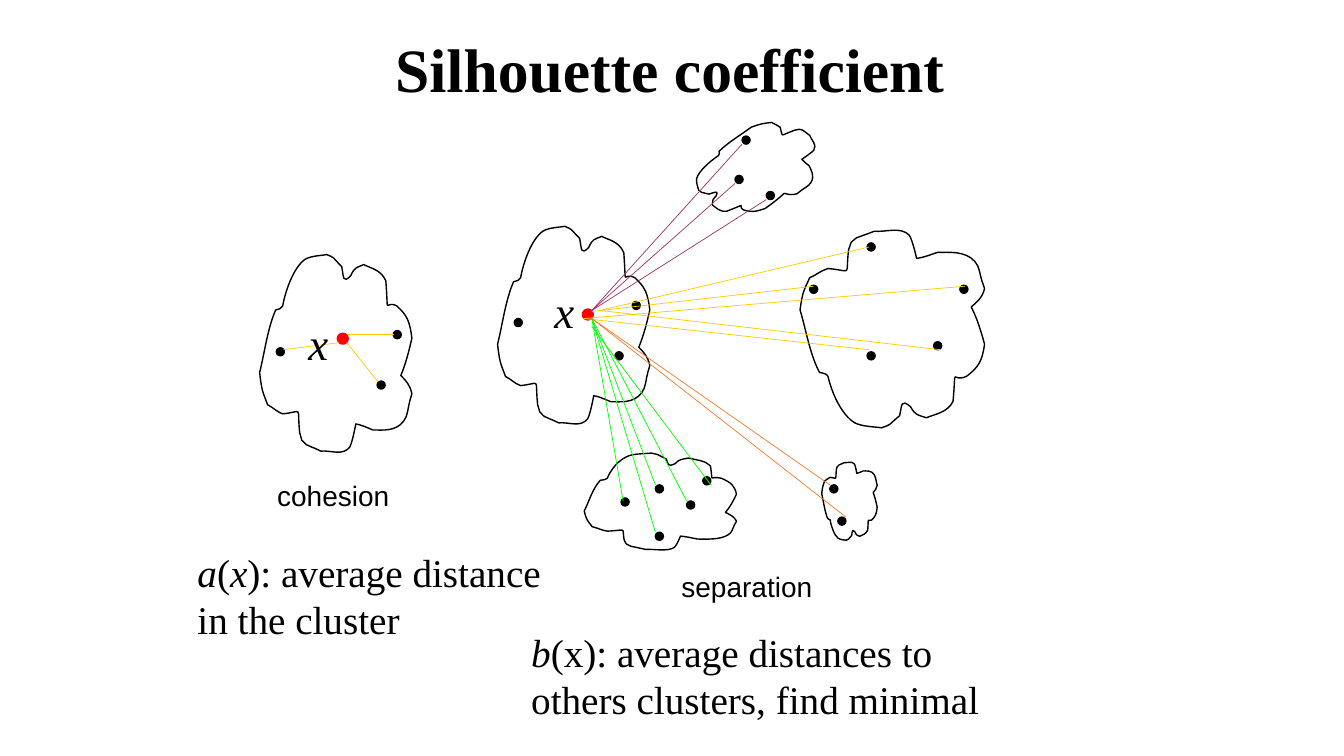
from dataclasses import dataclass

from lxml.etree import SubElement
from pptx import Presentation
from pptx.dml.color import RGBColor
from pptx.enum.shapes import MSO_CONNECTOR, MSO_SHAPE
from pptx.enum.text import MSO_ANCHOR, MSO_AUTO_SIZE, PP_ALIGN
from pptx.oxml.ns import qn
from pptx.shapes.autoshape import Shape
from pptx.shapes.shapetree import GroupShapes
from pptx.slide import Slide
from pptx.util import Inches, Pt

BLACK = RGBColor(0x00, 0x00, 0x00)
RED = RGBColor(0xFF, 0x00, 0x00)
YELLOW = RGBColor(0xFF, 0xCC, 0x00)
GREEN = RGBColor(0x00, 0xFF, 0x00)
ORANGE = RGBColor(0xED, 0x7D, 0x31)
PURPLE = RGBColor(0x99, 0x33, 0x66)
SERIF, SANS = "Times New Roman", "Arial"
DOT_SIZE = 0.08

Point = tuple[float, float]

# Upright cloud outline on a 152 by 200 grid: a start point, then three points per curve.
OUTLINE_WIDTH, OUTLINE_HEIGHT = 152, 200
OUTLINE = [
    (16, 55),
    (8, 73), (5, 97), (0, 117), (2, 135), (3, 136), (8, 149),
    (14, 152), (17, 156), (23, 158), (44, 156), (37, 149), (40, 177),
    (41, 179), (41, 181), (42, 184), (49, 191), (44, 187), (52, 191),
    (55, 192), (61, 195), (61, 195), (71, 194), (83, 200), (90, 191),
    (93, 185), (96, 168), (96, 168), (102, 169), (108, 172), (113, 174),
    (122, 174), (136, 176), (144, 165), (148, 160), (148, 152), (150, 145),
    (151, 142), (152, 138), (152, 138), (150, 129), (146, 125), (141, 120),
    (146, 108), (149, 96), (152, 83), (150, 66), (147, 60), (137, 51),
    (124, 44), (129, 65), (126, 26), (121, 15), (112, 14), (104, 10),
    (97, 13), (95, 12), (91, 21), (83, 29), (84, 23), (82, 12),
    (71, 1), (76, 4), (67, 0), (63, 1), (51, 1), (45, 5),
    (34, 13), (26, 35), (23, 51), (22, 54), (19, 54), (16, 55),
]


@dataclass
class Cluster:
    """A cloud lying on its side before its turn, and the top left corners of its dots."""
    left: float
    top: float
    width: float
    height: float
    dots: list[Point]
    angle: float = 270
    flipped: bool = False


@dataclass
class Distance:
    start: Point
    end: Point
    color: RGBColor


@dataclass
class Span:
    text: str
    italic: bool = False


@dataclass
class Label:
    left: float
    top: float
    width: float
    height: float
    spans: list[Span]
    size: int
    font: str = SERIF
    wrap: bool = True


@dataclass
class Diagram:
    clusters: list[Cluster]
    x_dot: Point
    distances: list[Distance]
    labels: list[Label]


def rays(start: Point, color: RGBColor, *ends: Point) -> list[Distance]:
    """Distances that share a start and a color."""
    return [Distance(start, end, color) for end in ends]


COHESION = Diagram(
    [Cluster(2.33, 2.77, 2, 1.51, [(3.74, 3.78), (2.74, 3.45), (3.9, 3.28)])],
    (3.36, 3.32),
    [Distance((2.81, 3.47), (3.36, 3.4), YELLOW),
     Distance((3.44, 3.4), (3.75, 3.79), YELLOW),
     Distance((3.44, 3.32), (3.91, 3.32), YELLOW)],
    [Label(2.65, 4.7, 1.31, 0.43, [Span("cohesion")], 20, SANS, wrap=False),
     Label(2.96, 3.08, 0.63, 0.64, [Span("x", True)], 32)],
)
SEPARATION = Diagram(
    [Cluster(4.69, 2.49, 2, 1.51, [(6.1, 3.49), (5.1, 3.16), (6.27, 2.99)]),
     Cluster(7.85, 2.33, 2, 1.83, [(9.52, 2.83), (8.03, 2.83), (8.6, 3.49),
                                   (8.6, 2.41), (9.26, 3.39)], 90, flipped=True),
     Cluster(6.06, 4.23, 0.98, 1.51, [(6.5, 5.28), (6.16, 4.94), (6.97, 4.73),
                                      (6.81, 4.97), (6.5, 4.81)]),
     Cluster(8.03, 4.69, 0.79, 0.55, [(8.31, 5.13), (8.23, 4.81)], 90, flipped=True),
     Cluster(6.89, 1.27, 1.26, 0.79, [(7.36, 1.35), (7.29, 1.74), (7.6, 1.9)],
             155.2, flipped=True)],
    (5.79, 3.08),
    rays((5.87, 3.09), YELLOW, (8.07, 2.84))
    + rays((5.79, 3.16), YELLOW, (8.62, 3.47), (9.57, 2.84))
    + rays((5.95, 3.08), YELLOW, (9.33, 3.47), (8.62, 2.45))
    + rays((5.87, 3.24), GREEN, (7.05, 4.81))
    + rays((5.87, 3.16), GREEN, (6.81, 4.97), (6.5, 4.81), (6.5, 5.28), (6.18, 4.97))
    + rays((5.87, 3.16), ORANGE, (8.23, 4.81), (8.39, 5.13))
    + rays((5.87, 3.08), PURPLE, (7.29, 1.82), (7.6, 1.98), (7.36, 1.43)),
    [Label(6.66, 5.6, 1.5, 0.43, [Span("separation")], 20, SANS, wrap=False),
     Label(5.4, 2.77, 0.47, 0.64, [Span("x", True)], 32)],
)
DEFINITIONS = [
    Label(1.86, 5.39, 3.62, 1.03,
          [Span("a", True), Span("("), Span("x", True),
           Span("): average distance in the cluster")], 28),
    Label(5.17, 6.18, 4.65, 1.03,
          [Span("b", True),
           Span("(x): average distances to others clusters, find minimal")], 28),
]


def bend_segments(cloud: Shape) -> None:
    """Turn each three straight segments of the outline into one Bezier curve."""
    segments = list(cloud._element.iter(qn("a:lnTo")))
    for first, second, third in zip(segments[::3], segments[1::3], segments[2::3]):
        first.tag = qn("a:cubicBezTo")
        for segment in (second, third):
            first.append(segment[0])
            segment.getparent().remove(segment)


def draw_cloud(shapes: GroupShapes, cluster: Cluster) -> None:
    points = []
    for x, y in OUTLINE:
        across = x / OUTLINE_WIDTH
        points.append((
            Inches(cluster.left + (1 - y / OUTLINE_HEIGHT) * cluster.width),
            Inches(cluster.top + (1 - across if cluster.flipped else across) * cluster.height)))
    builder = shapes.build_freeform(*points[0])
    builder.add_line_segments(points[1:], close=True)
    cloud = builder.convert_to_shape()
    bend_segments(cloud)
    cloud.rotation = cluster.angle
    cloud.shadow.inherit = False
    cloud.fill.background()
    cloud.line.color.rgb = BLACK
    cloud.line.width = Pt(1)


def draw_dot(shapes: GroupShapes, corner: Point, color: RGBColor, line_width: float) -> None:
    dot = shapes.add_shape(MSO_SHAPE.OVAL, *map(Inches, (*corner, DOT_SIZE, DOT_SIZE)))
    dot.shadow.inherit = False
    dot.fill.solid()
    dot.fill.fore_color.rgb = color
    dot.line.color.rgb = color
    dot.line.width = Pt(line_width)


def draw_distance(shapes: GroupShapes, distance: Distance) -> None:
    line = shapes.add_connector(MSO_CONNECTOR.STRAIGHT,
                                *map(Inches, (*distance.start, *distance.end)))
    line.line.color.rgb = distance.color
    line.line.width = Pt(0.5)
    SubElement(line._element.spPr, qn("a:effectLst"))


def draw_label(shapes: GroupShapes, label: Label) -> Shape:
    box = shapes.add_textbox(*map(Inches, (label.left, label.top, label.width, label.height)))
    frame = box.text_frame
    frame.word_wrap = label.wrap
    frame.auto_size = MSO_AUTO_SIZE.SHAPE_TO_FIT_TEXT
    if not label.wrap:
        frame.margin_right = 0
    for span in label.spans:
        run = frame.paragraphs[0].add_run()
        run.text = span.text
        run.font.name = label.font
        run.font.size = Pt(label.size)
        run.font.italic = span.italic
        run.font.color.rgb = BLACK
    return box


def draw_diagram(page: Slide, diagram: Diagram) -> None:
    shapes = page.shapes.add_group_shape().shapes
    for cluster in diagram.clusters:
        draw_cloud(shapes, cluster)
        for corner in cluster.dots:
            draw_dot(shapes, corner, BLACK, 1)
    draw_dot(shapes, diagram.x_dot, RED, 3)
    for distance in diagram.distances:
        draw_distance(shapes, distance)
    for label in diagram.labels:
        draw_label(shapes, label)


def draw_title(page: Slide) -> None:
    title = Label(1.9, 0.27, 9.49, 0.8, [Span("Silhouette coefficient")], 44)
    frame = draw_label(page.shapes, title).text_frame
    frame.auto_size = MSO_AUTO_SIZE.NONE
    frame.vertical_anchor = MSO_ANCHOR.MIDDLE
    frame.margin_left = frame.margin_right = frame.margin_top = frame.margin_bottom = 0
    frame.paragraphs[0].alignment = PP_ALIGN.CENTER
    frame.paragraphs[0].runs[0].font.bold = True


deck = Presentation()
deck.slide_width, deck.slide_height = Inches(13.33), Inches(7.5)
page = deck.slides.add_slide(deck.slide_layouts[6])
for diagram in (SEPARATION, COHESION):
    draw_diagram(page, diagram)
for definition in DEFINITIONS:
    draw_label(page.shapes, definition)
draw_title(page)
deck.save("out.pptx")
